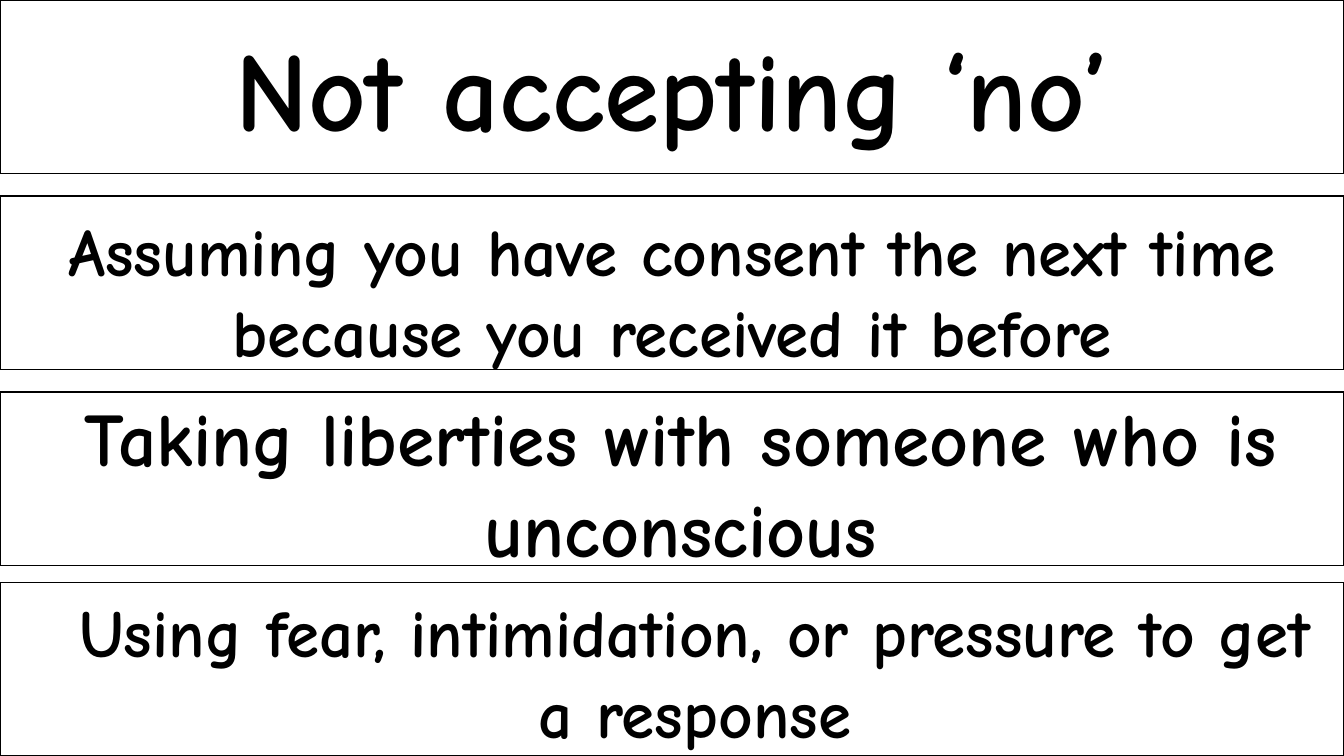
from dataclasses import dataclass

from pptx import Presentation
from pptx.dml.color import RGBColor
from pptx.enum.shapes import MSO_SHAPE
from pptx.enum.text import MSO_ANCHOR, MSO_AUTO_SIZE, PP_ALIGN
from pptx.util import Pt


@dataclass(frozen=True)
class Theme:
    font: str = "Comic Neue"
    ink: RGBColor = RGBColor(0, 0, 0)
    paper: RGBColor = RGBColor(255, 255, 255)
    title_size: int = 80
    large_size: int = 54
    body_size: int = 48


THEME = Theme()
PAGE_WIDTH, PAGE_HEIGHT = 960, 540
STRIP_HEIGHT = 124
STRIP_TOPS = (0, 140, 280, PAGE_HEIGHT - STRIP_HEIGHT)

TITLE = "Not accepting ‘no’"
# Each statement: text, type size, left, top, width, height
STATEMENTS = (
    ("Assuming you have consent the next time because you received it before",
     THEME.body_size, 0, 146, PAGE_WIDTH, 124),
    ("Taking liberties with someone who is unconscious",
     THEME.large_size, 22.3, 275.8, 928, 138),
    ("Using fear, intimidation, or pressure to get a response",
     THEME.body_size, 32.4, 418.3, 928, 124),
)


def add_strip(page, top):
    strip = page.shapes.add_shape(
        MSO_SHAPE.RECTANGLE, Pt(0), Pt(top), Pt(PAGE_WIDTH), Pt(STRIP_HEIGHT))
    strip.shadow.inherit = False
    strip.fill.solid()
    strip.fill.fore_color.rgb = THEME.paper
    strip.line.color.rgb = THEME.ink
    strip.line.width = Pt(1)


def write_centred(box, text, size):
    frame = box.text_frame
    frame.word_wrap = True
    frame.auto_size = MSO_AUTO_SIZE.SHAPE_TO_FIT_TEXT
    frame.vertical_anchor = MSO_ANCHOR.TOP
    para = frame.paragraphs[0]
    para.alignment = PP_ALIGN.CENTER
    span = para.add_run()
    span.text = text
    span.font.name = THEME.font
    span.font.size = Pt(size)
    span.font.bold = True
    span.font.color.rgb = THEME.ink


def place_title(page):
    """Move the title placeholder onto the first strip, in front of it."""
    box = page.shapes.title
    box.left, box.top, box.width, box.height = Pt(16), Pt(10), Pt(928), Pt(104.4)
    box.element.getparent().append(box.element)
    write_centred(box, TITLE, THEME.title_size)


def add_statement(page, text, size, left, top, width, height):
    box = page.shapes.add_textbox(Pt(left), Pt(top), Pt(width), Pt(height))
    write_centred(box, text, size)


def main():
    deck = Presentation()
    deck.slide_width, deck.slide_height = Pt(PAGE_WIDTH), Pt(PAGE_HEIGHT)
    title_only = deck.slide_layouts.get_by_name("Title Only")
    page = deck.slides.add_slide(title_only)
    for top in STRIP_TOPS:
        add_strip(page, top)
    place_title(page)
    for statement in STATEMENTS:
        add_statement(page, *statement)
    deck.save("out.pptx")


if __name__ == "__main__":
    main()
